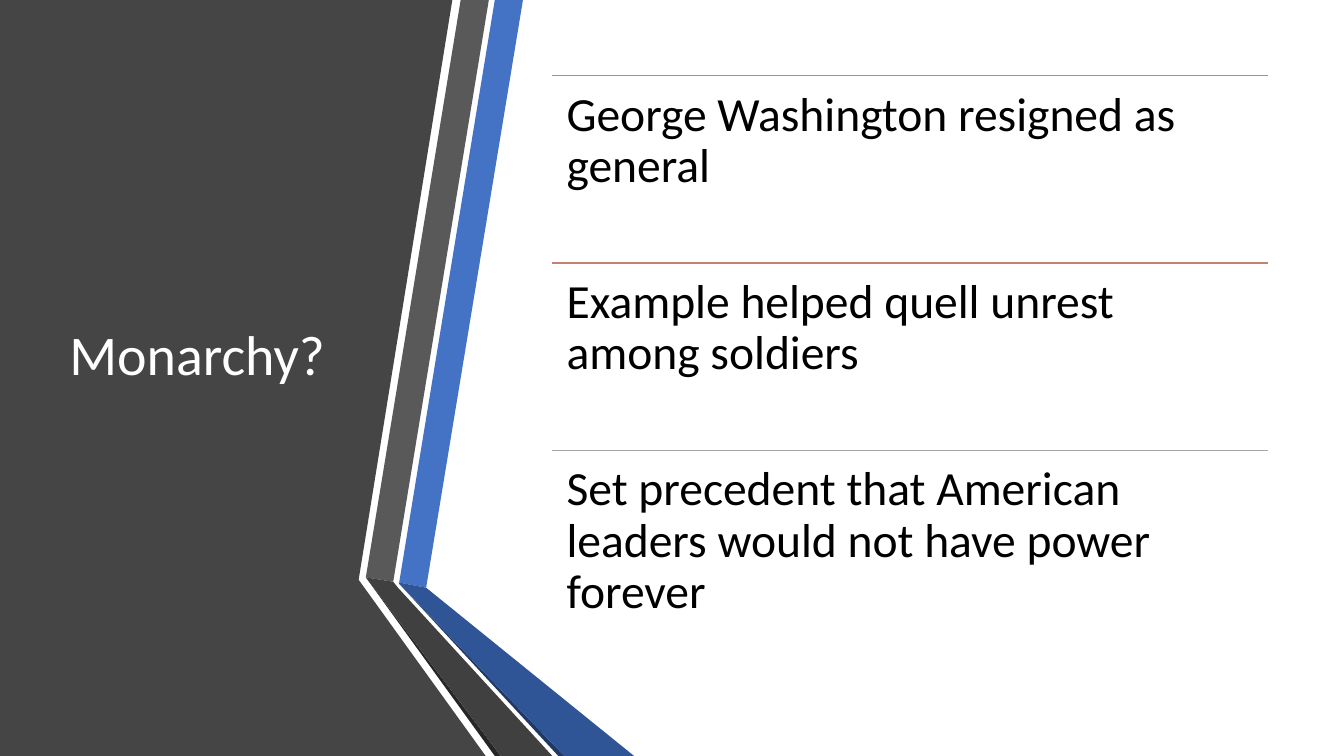
from dataclasses import dataclass

from lxml import etree
from pptx import Presentation
from pptx import util as u
from pptx.dml.color import RGBColor
from pptx.enum import shapes, text
from pptx.oxml.ns import qn


@dataclass(frozen=True)
class Theme:
    font: str = "Calibri"
    title_size: int = 40
    body_size: int = 34
    title: str = "FFFFFF"
    body: str = "000000"
    panel: str = "454545"
    blue: str = "4472C4"
    blue_fold: str = "2F5597"
    blue_edge: str = "203864"
    grey: str = "595959"
    grey_fold: str = "404040"
    grey_edge: str = "262626"
    rules: tuple = ("ED7D31", "C48170", "A5A5A5")


THEME = Theme()
WIDTH, HEIGHT = 33.87, 19.05

PANEL = [(0, 0), (11.4, 0), (9.04, 14.61), (12.24, HEIGHT), (0, HEIGHT)]
RIBBONS = [
    (THEME.blue, [(10.06, 14.68), (10.74, 14.81), (13.18, 0), (12.47, 0)]),
    (THEME.grey, [(12.32, 0), (11.61, 0), (9.22, 14.55), (9.91, 14.66)]),
    (THEME.grey_edge, [(9.22, 14.55), (12.47, HEIGHT), (12.62, HEIGHT)]),
    (THEME.blue_edge, [(10.06, 14.71), (14.07, HEIGHT), (14.22, HEIGHT)]),
    (THEME.blue_fold, [(10.06, 14.71), (14.22, HEIGHT), (15.98, HEIGHT),
                       (10.74, 14.81), (10.06, 14.68)]),
    (THEME.grey_fold, [(13.92, HEIGHT), (10.03, 14.81), (9.91, 14.66),
                       (9.22, 14.55), (12.62, HEIGHT)]),
]

POINTS = [
    "George Washington resigned as general",
    "Example helped quell unrest among soldiers",
    "Set precedent that American leaders would not have power forever",
]
LIST_LEFT, LIST_TOP, LIST_WIDTH, ROW_HEIGHT = 13.92, 1.91, 18.03, 4.72


def add_polygon(parent, points, color):
    corners = [(u.Cm(x), u.Cm(y)) for x, y in points]
    builder = parent.build_freeform(*corners[0])
    builder.add_line_segments(corners[1:], close=True)
    shape = builder.convert_to_shape()
    shape.shadow.inherit = False
    shape.fill.solid()
    shape.fill.fore_color.rgb = RGBColor.from_string(color)
    shape.line.fill.background()


def add_rule(parent, left, top, width, color):
    rule = parent.add_connector(
        shapes.MSO_CONNECTOR.STRAIGHT,
        u.Cm(left), u.Cm(top), u.Cm(left + width), u.Cm(top))
    rule.line.color.rgb = RGBColor.from_string(color)
    rule.line.width = u.Pt(1)
    etree.SubElement(rule._element.spPr, qn("a:effectLst"))


def add_text(parent, box, wording, size, color, anchor, insets):
    shape = parent.add_textbox(*map(u.Cm, box))
    frame = shape.text_frame
    frame.word_wrap = True
    frame.vertical_anchor = anchor
    frame.margin_left = frame.margin_right = u.Cm(insets[0])
    frame.margin_top = frame.margin_bottom = u.Cm(insets[1])
    paragraph = frame.paragraphs[0]
    paragraph.text = wording
    paragraph.line_spacing = 0.9
    paragraph.font.name = THEME.font
    paragraph.font.size = u.Pt(size)
    paragraph.font.color.rgb = RGBColor.from_string(color)


def add_ribbons(slide):
    group = slide.shapes.add_group_shape()
    for color, points in RIBBONS:
        add_polygon(group.shapes, points, color)


def add_points(slide):
    group = slide.shapes.add_group_shape()
    for row, (wording, color) in enumerate(zip(POINTS, THEME.rules)):
        top = LIST_TOP + row * ROW_HEIGHT
        add_rule(group.shapes, LIST_LEFT, top, LIST_WIDTH, color)
        add_text(group.shapes, (LIST_LEFT, top, LIST_WIDTH, ROW_HEIGHT), wording,
                 THEME.body_size, THEME.body, text.MSO_ANCHOR.TOP, (0.36, 0.36))


def main():
    presentation = Presentation()
    presentation.slide_width = u.Cm(WIDTH)
    presentation.slide_height = u.Cm(HEIGHT)
    slide = presentation.slides.add_slide(presentation.slide_layouts[6])
    add_polygon(slide.shapes, PANEL, THEME.panel)
    add_ribbons(slide)
    add_text(slide.shapes, (1.5, 1.91, 7.72, 14.17), "Monarchy?",
             THEME.title_size, THEME.title, text.MSO_ANCHOR.MIDDLE, (0.25, 0.13))
    add_points(slide)
    presentation.save("out.pptx")


if __name__ == "__main__":
    main()
